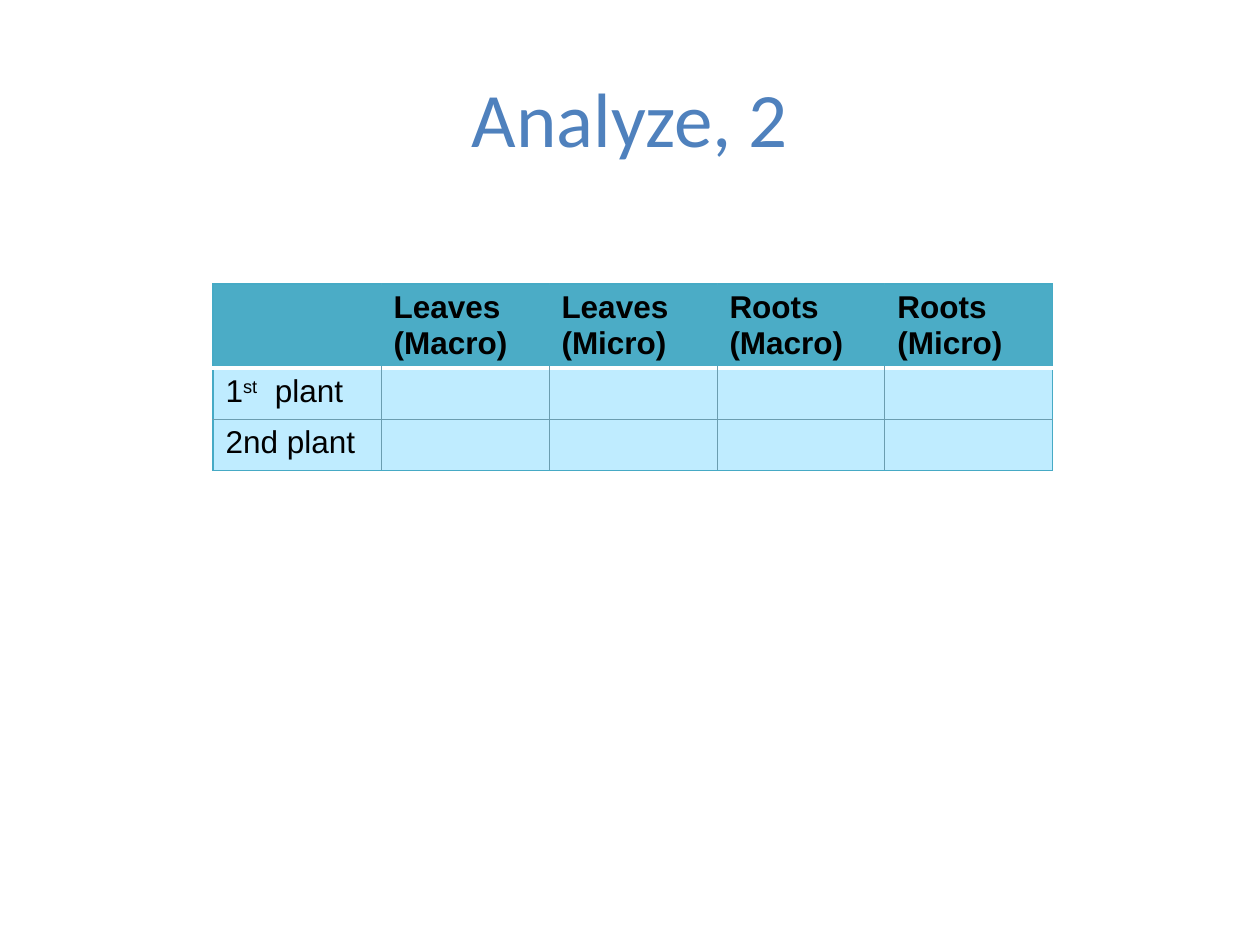
from lxml.etree import SubElement
from pptx import Presentation
from pptx.dml.color import RGBColor
from pptx.enum.text import MSO_ANCHOR, PP_ALIGN
from pptx.oxml.ns import qn
from pptx.util import Emu, Pt

PAGE_WIDTH, PAGE_HEIGHT = 1260, 945
TITLE_BLUE = RGBColor(0x4F, 0x81, 0xBD)
HEADER_TEAL = RGBColor(0x4B, 0xAC, 0xC6)
EDGE_TEAL = RGBColor(0x46, 0xAA, 0xC5)
GRID_GRAY = RGBColor(0x6B, 0x9D, 0xB0)
BODY_BLUE = RGBColor(0xBF, 0xEC, 0xFF)
BLACK = RGBColor(0x00, 0x00, 0x00)
WHITE = RGBColor(0xFF, 0xFF, 0xFF)

SUPERSCRIPT_MARK = "^"
ROW_HEIGHTS = [84, 47, 47]
ROWS = [
    ["", "Leaves (Macro)", "Leaves\n(Micro)", "Roots (Macro)", "Roots (Micro)"],
    ["1^st^  plant", "", "", "", ""],
    ["2nd plant", "", "", "", ""],
]


def px(length):
    return Emu(round(length * 914400 / 126))


def write_text(frame, text, font="Arial", size=18, color=BLACK, bold=False, align=PP_ALIGN.LEFT):
    for index, line in enumerate(text.split("\n")):
        para = frame.add_paragraph() if index else frame.paragraphs[0]
        para.alignment = align
        para.font.size = Pt(size)
        for part, words in enumerate(line.split(SUPERSCRIPT_MARK)):
            if not words:
                continue
            span = para.add_run()
            span.text = words
            span.font.name = font
            span.font.size = Pt(size)
            span.font.bold = bold
            span.font.color.rgb = color
            if part % 2:
                span._r.get_or_add_rPr().set("baseline", "30000")


def set_border(cell, side, color, width):
    line = SubElement(cell._tc.get_or_add_tcPr(), qn(f"a:ln{side}"), w=str(Pt(width)))
    fill = SubElement(line, qn("a:solidFill"))
    SubElement(fill, qn("a:srgbClr"), val=str(color))


def cell_borders(row, column, last_row, last_column):
    edge = (EDGE_TEAL, 0.75)
    inner = (GRID_GRAY, 0.5) if row else (HEADER_TEAL, 0.5)
    divider = (WHITE, 2)
    return {
        "L": inner if column else edge,
        "R": inner if column < last_column else edge,
        "T": edge if row == 0 else divider if row == 1 else inner,
        "B": divider if row == 0 else edge if row == last_row else inner,
    }


def add_title(page, left, top, width, height):
    title = page.shapes.title
    title.left, title.top, title.width, title.height = map(px, (left, top, width, height))
    title.text_frame.vertical_anchor = MSO_ANCHOR.MIDDLE
    write_text(title.text_frame, "Analyze, 2", font="Calibri", size=44,
               color=TITLE_BLUE, align=PP_ALIGN.CENTER)


def add_plant_table(page, left, top, width):
    column_count = len(ROWS[0])
    box = page.shapes.add_table(len(ROWS), column_count, px(left), px(top),
                                px(width), px(sum(ROW_HEIGHTS)))
    table = box.table
    table.horz_banding = False
    for column in table.columns:
        column.width = px(width / column_count)
    for row, (texts, height) in enumerate(zip(ROWS, ROW_HEIGHTS)):
        table.rows[row].height = px(height)
        for column, text in enumerate(texts):
            cell = table.cell(row, column)
            borders = cell_borders(row, column, len(ROWS) - 1, column_count - 1)
            for side, (color, line_width) in borders.items():
                set_border(cell, side, color, line_width)
            cell.fill.solid()
            cell.fill.fore_color.rgb = BODY_BLUE if row else HEADER_TEAL
            write_text(cell.text_frame, text, bold=row == 0)


def main():
    deck = Presentation()
    deck.slide_width, deck.slide_height = px(PAGE_WIDTH), px(PAGE_HEIGHT)
    page = deck.slides.add_slide(deck.slide_layouts[5])
    add_title(page, 63, 38, 1134, 158)
    add_plant_table(page, 213, 284, 840)
    deck.save("out.pptx")


if __name__ == "__main__":
    main()
